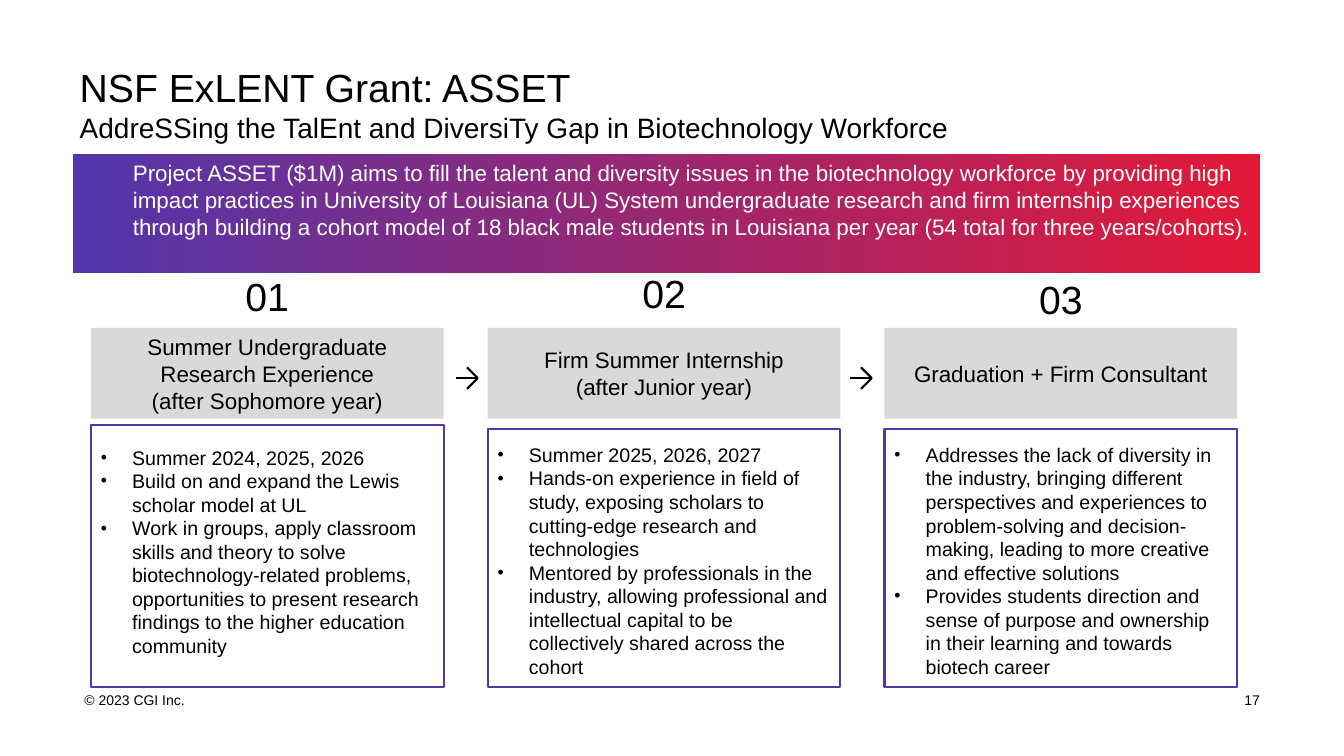
"""Build the slide about the three stages of the ASSET grant."""
from dataclasses import dataclass

from lxml import etree
from pptx import Presentation
from pptx.dml.color import RGBColor
from pptx.enum.shapes import MSO_CONNECTOR, MSO_SHAPE
from pptx.enum.text import MSO_ANCHOR, PP_ALIGN
from pptx.oxml.ns import qn
from pptx.util import Cm, Pt

RECTANGLE, OVAL = MSO_SHAPE.RECTANGLE, MSO_SHAPE.OVAL
STRAIGHT = MSO_CONNECTOR.STRAIGHT
TOP, MIDDLE = MSO_ANCHOR.TOP, MSO_ANCHOR.MIDDLE
LEFT, CENTER, RIGHT = PP_ALIGN.LEFT, PP_ALIGN.CENTER, PP_ALIGN.RIGHT

BLACK = RGBColor(0x00, 0x00, 0x00)
WHITE = RGBColor(0xFF, 0xFF, 0xFF)
GRAY = RGBColor(0xD9, 0xD9, 0xD9)
PURPLE = RGBColor(0x52, 0x36, 0xAB)
MAGENTA = RGBColor(0xA8, 0x24, 0x65)
RED = RGBColor(0xE3, 0x19, 0x37)
BANNER_STOPS = ((0, PURPLE), (59, MAGENTA), (100, RED))

FONT = "Arial"
COLUMN_LEFT, COLUMN_STEP, COLUMN_WIDTH = 2.29, 10, 8.89
HEADING_TOP, HEADING_HEIGHT = 8.26, 2.29
CARD_BOTTOM = 17.32
NUMBER_WIDTH, NUMBER_HEIGHT = 1.55, 1.07
ARROW_LEFT, ARROW_STEP, ARROW_SIZE, ARROW_MIDDLE = 11.3, 9.93, 0.97, 9.53
FOOTER_TOP, FOOTER_HEIGHT = 17.4, 0.48


@dataclass
class Area:
    """Place of a box in centimetres."""
    left: float
    top: float
    width: float
    height: float

    def lengths(self) -> tuple:
        """Return the four lengths for python-pptx."""
        return Cm(self.left), Cm(self.top), Cm(self.width), Cm(self.height)


@dataclass
class Stage:
    """One column: number, heading and card of bullets."""
    number: str
    number_top: float
    heading: str
    card_top: float
    card_anchor: int
    bullets: tuple


STAGES = (
    Stage("01", 6.99, "Summer Undergraduate Research Experience\n(after Sophomore year)", 10.72, TOP, (
        "Summer 2024, 2025, 2026",
        "Build on and expand the Lewis scholar model at UL",
        "Work in groups, apply classroom skills and theory to solve biotechnology-related problems, "
        "opportunities to present research findings to the higher education community",
    )),
    Stage("02", 6.91, "Firm Summer Internship\n(after Junior year)", 10.8, MIDDLE, (
        "Summer 2025, 2026, 2027",
        "Hands-on experience in field of study, exposing scholars to cutting-edge research and technologies",
        "Mentored by professionals in the industry, allowing professional and intellectual capital "
        "to be collectively shared across the cohort",
    )),
    Stage("03", 7.06, "Graduation + Firm Consultant", 10.8, MIDDLE, (
        "Addresses the lack of diversity in the industry, bringing different perspectives and "
        "experiences to problem-solving and decision-making, leading to more creative and effective solutions",
        "Provides students direction and sense of purpose and ownership in their learning "
        "and towards biotech career",
    )),
)
BANNER_TEXT = (
    "Project ASSET ($1M) aims to fill the talent and diversity issues in the biotechnology workforce "
    "by providing high impact practices in University of Louisiana (UL) System undergraduate research "
    "and firm internship experiences through building a cohort model of 18 black male students in "
    "Louisiana per year (54 total for three years/cohorts)."
)


def write(box, text: str, size: float, color=BLACK, align=LEFT, anchor=TOP,
          insets=(0, 0, 0, 0), wrap=True) -> None:
    """Fill a box with text and format its runs."""
    frame = box.text_frame
    frame.word_wrap = wrap
    frame.vertical_anchor = anchor
    frame.margin_left, frame.margin_top, frame.margin_right, frame.margin_bottom = map(Cm, insets)
    frame.text = text
    for para in frame.paragraphs:
        para.alignment = align
        for span in para.runs:
            span.font.name, span.font.size = FONT, Pt(size)
            span.font.color.rgb = color


def add_label(page, area: Area, text: str, size: float, **options):
    """Add a text box."""
    box = page.shapes.add_textbox(*area.lengths())
    write(box, text, size, **options)
    return box


def add_block(shapes, kind, area: Area, fill: RGBColor, line=None):
    """Add a flat preset shape."""
    box = shapes.add_shape(kind, *area.lengths())
    box.shadow.inherit = False
    box.fill.solid()
    box.fill.fore_color.rgb = fill
    if line is None:
        box.line.fill.background()
    else:
        box.line.color.rgb = line
        box.line.width = Pt(1.5)
    return box


def add_bullets(box) -> None:
    """Give each paragraph a bullet and a hanging indent."""
    for para in box.text_frame.paragraphs:
        properties = para._p.get_or_add_pPr()
        properties.set("marL", str(Cm(0.79)))
        properties.set("indent", str(-Cm(0.79)))
        etree.SubElement(properties, qn("a:buSzPct")).set("val", "90000")
        etree.SubElement(properties, qn("a:buFont")).set("typeface", FONT)
        etree.SubElement(properties, qn("a:buChar")).set("char", "•")


def add_banner(page) -> None:
    """Add the gradient band with the project summary."""
    box = add_block(page.shapes, RECTANGLE, Area(1.83, 3.89, 29.92, 3), PURPLE)
    box.fill.gradient()
    box.fill.gradient_angle = 0
    stops = box._element.spPr.find(".//" + qn("a:gsLst"))
    for stop in list(stops):
        stops.remove(stop)
    for percent, color in BANNER_STOPS:
        stop = etree.SubElement(stops, qn("a:gs"))
        stop.set("pos", str(percent * 1000))
        etree.SubElement(stop, qn("a:srgbClr")).set("val", str(color))
    write(box, BANNER_TEXT, 16, color=WHITE, insets=(0.25, 0.13, 0.25, 0.13))
    box.text_frame.paragraphs[0]._p.get_or_add_pPr().set("marL", str(Cm(1.27)))


def add_stage(page, stage: Stage, left: float) -> None:
    """Add the heading, card and number of one column."""
    heading = add_block(page.shapes, RECTANGLE,
                        Area(left, HEADING_TOP, COLUMN_WIDTH, HEADING_HEIGHT), GRAY)
    write(heading, stage.heading, 16, align=CENTER, anchor=MIDDLE, insets=(0.25,) * 4)
    card = add_block(page.shapes, RECTANGLE,
                     Area(left, stage.card_top, COLUMN_WIDTH, CARD_BOTTOM - stage.card_top), WHITE, PURPLE)
    write(card, "\n".join(stage.bullets), 14, anchor=stage.card_anchor, insets=(0.25, 0.51, 0.25, 0.38))
    add_bullets(card)
    number_left = left + (COLUMN_WIDTH - NUMBER_WIDTH) / 2
    number = add_label(page, Area(number_left, stage.number_top, NUMBER_WIDTH, NUMBER_HEIGHT),
                       stage.number, 28, align=CENTER, anchor=MIDDLE)
    number.text_frame.paragraphs[0].line_spacing = 0.9


def add_arrow(page, left: float) -> None:
    """Add a grouped arrow on a white disc."""
    group = page.shapes.add_group_shape()
    add_block(group.shapes, OVAL,
              Area(left, ARROW_MIDDLE - ARROW_SIZE / 2, ARROW_SIZE, ARROW_SIZE), WHITE)
    tip, middle = Cm(left + 0.74), Cm(ARROW_MIDDLE)
    shaft = group.shapes.add_connector(STRAIGHT, Cm(left + 0.2), middle, tip, middle)
    etree.SubElement(shaft._element.spPr, qn("a:effectLst"))
    back, reach = Cm(left + 0.47), Cm(0.27)
    builder = group.shapes.build_freeform(back, middle - reach)
    builder.add_line_segments([(tip, middle), (back, middle + reach)], close=False)
    head = builder.convert_to_shape()
    head.shadow.inherit = False
    head.fill.background()
    for stroke in (shaft, head):
        stroke.line.color.rgb = BLACK
        stroke.line.width = Pt(1.5)


def main() -> None:
    """Build and save the deck."""
    deck = Presentation()
    deck.slide_width, deck.slide_height = Cm(33.87), Cm(19.05)
    page = deck.slides.add_slide(deck.slide_layouts[6])
    add_label(page, Area(2.13, FOOTER_TOP, 5.33, FOOTER_HEIGHT), "© 2023 CGI Inc.", 10,
              anchor=MIDDLE, wrap=False)
    title = add_label(page, Area(2.01, 1.5, 29.67, 2.39),
                      "NSF ExLENT Grant: ASSET\vAddreSSing the TalEnt and DiversiTy Gap in Biotechnology Workforce",
                      28, insets=(0, 0.1, 0, 0))
    title.text_frame.paragraphs[0].runs[1].font.size = Pt(20)
    for index, stage in enumerate(STAGES):
        add_stage(page, stage, COLUMN_LEFT + index * COLUMN_STEP)
    for index in range(len(STAGES) - 1):
        add_arrow(page, ARROW_LEFT + index * ARROW_STEP)
    add_banner(page)
    add_label(page, Area(31.01, FOOTER_TOP, 0.74, FOOTER_HEIGHT), "17", 10, align=RIGHT, anchor=MIDDLE)
    deck.save("out.pptx")


if __name__ == "__main__":
    main()
